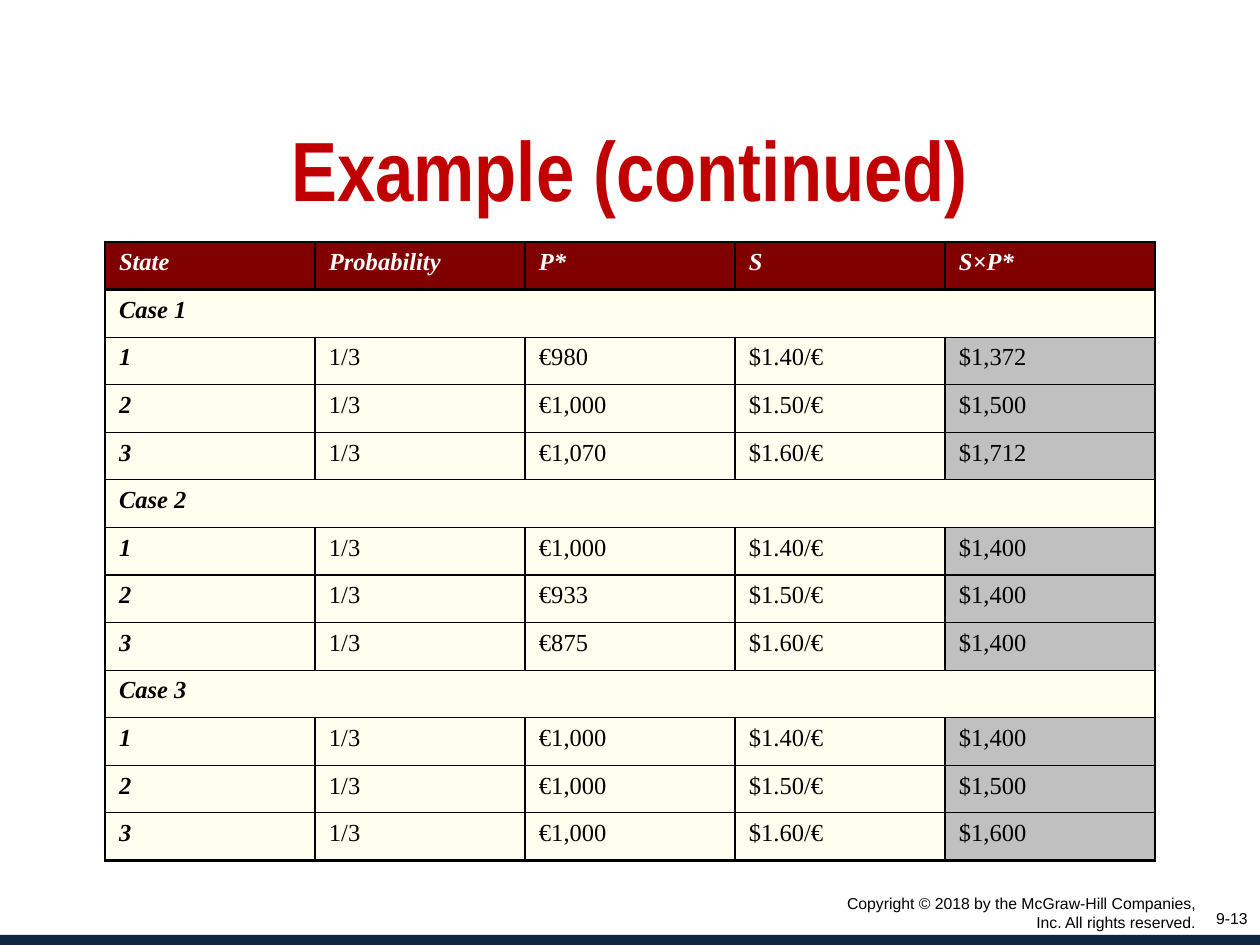
import pptx
import pptx.util
import pptx.dml.color
import pptx.enum.shapes
import pptx.enum.text
import pptx.oxml
from dataclasses import dataclass
from pptx.oxml.ns import nsdecls

SCALE = 914400 / 126
ALIGN = pptx.enum.text.PP_ALIGN
ANCHOR = pptx.enum.text.MSO_ANCHOR


def px(n):
    return pptx.util.Emu(round(n * SCALE))


def rgb(code):
    return pptx.dml.color.RGBColor.from_string(code)


@dataclass
class Theme:
    red: str = "C00000"
    head: str = "800000"
    cream: str = "FFFFEF"
    gray: str = "C0C0C0"
    navy: str = "0F243E"
    black: str = "000000"
    white: str = "FFFFFF"
    big: int = 48
    cell: int = 14
    small: int = 9
    thin: float = 0.75
    thick: float = 2
    title: str = "Arial Narrow"
    serif: str = "Times New Roman"
    sans: str = "Arial"


class Deck:
    def __init__(self, theme):
        self.theme = theme
        self.file = pptx.Presentation()
        self.file.slide_width = px(1260)
        self.file.slide_height = px(945)
        self.slide = self.file.slides.add_slide(self.file.slide_layouts[5])

    def style(self, para, name, size, color, bold=False, italic=False):
        for run in para.runs:
            font = run.font
            font.name, font.size = name, pptx.util.Pt(size)
            font.bold, font.italic = bold, italic
            font.color.rgb = rgb(color)

    def place(self, shape, x, y, w, h):
        shape.left, shape.top, shape.width, shape.height = map(px, (x, y, w, h))

    def bar(self, x, y, w, h, color):
        kind = pptx.enum.shapes.MSO_SHAPE.RECTANGLE
        shape = self.slide.shapes.add_shape(kind, *map(px, (x, y, w, h)))
        shape.shadow.inherit = False
        shape.fill.solid()
        shape.fill.fore_color.rgb = rgb(color)
        shape.line.fill.background()

    def title(self, text, x, y, w, h):
        shape = self.slide.shapes.title
        self.place(shape, x, y, w, h)
        frame = shape.text_frame
        frame.text = text
        frame.vertical_anchor = ANCHOR.TOP
        frame.margin_top = px(13)
        para = frame.paragraphs[0]
        para.alignment = ALIGN.CENTER
        self.style(para, self.theme.title, self.theme.big, self.theme.red, bold=True)

    def note(self, text, x, y, w, h, top):
        frame = self.slide.shapes.add_textbox(*map(px, (x, y, w, h))).text_frame
        frame.word_wrap = True
        frame.margin_top = px(top)
        frame.text = text
        para = frame.paragraphs[0]
        para.alignment = ALIGN.RIGHT
        self.style(para, self.theme.sans, self.theme.small, self.theme.black)

    def edge(self, cell, top, bottom):
        props = cell._tc.get_or_add_tcPr()
        thin = self.theme.thin
        for side, width in zip("LRTB", (thin, thin, top, bottom)):
            props.append(pptx.oxml.parse_xml(
                f'<a:ln{side} {nsdecls("a")} w="{pptx.util.Pt(width)}">'
                f'<a:solidFill><a:srgbClr val="{self.theme.black}"/></a:solidFill>'
                f'</a:ln{side}>'))

    def table(self, rows, x, y, w, h):
        theme = self.theme
        last, wide = len(rows) - 1, len(rows[0])
        grid = self.slide.shapes.add_table(
            len(rows), wide, *map(px, (x, y, w, h))).table
        for r, row in enumerate(rows):
            span = len(row) == 1
            top = theme.thick if r == 1 else theme.thin
            bottom = theme.thick if r in (0, last) else theme.thin
            for c in range(wide):
                cell = grid.cell(r, c)
                self.edge(cell, top, bottom)
                cell.fill.solid()
                fill = theme.gray if c == wide - 1 and not span else theme.cream
                cell.fill.fore_color.rgb = rgb(fill if r else theme.head)
                cell.margin_left = cell.margin_right = px(14)
                cell.margin_top = cell.margin_bottom = px(7)
                if c < len(row):
                    cell.text = row[c]
                    strong = r == 0 or c == 0
                    self.style(cell.text_frame.paragraphs[0], theme.serif, theme.cell,
                               theme.black if r else theme.white, strong, strong)
            if span:
                grid.cell(r, 0).merge(grid.cell(r, wide - 1))


def main():
    theme = Theme()
    deck = Deck(theme)

    # Bottom band and title
    deck.bar(0, 935, 1260, 13, theme.navy)
    deck.title("Example (continued)", 63, 105, 1134, 157)

    # Three cases, each with the same rates and odds
    rates = ("$1.40/€", "$1.50/€", "$1.60/€")
    cases = (
        (("€980", "$1,372"), ("€1,000", "$1,500"), ("€1,070", "$1,712")),
        (("€1,000", "$1,400"), ("€933", "$1,400"), ("€875", "$1,400")),
        (("€1,000", "$1,400"), ("€1,000", "$1,500"), ("€1,000", "$1,600")),
    )
    rows = [("State", "Probability", "P*", "S", "S×P*")]
    for n, case in enumerate(cases, 1):
        rows.append((f"Case {n}",))
        for state, (rate, (price, value)) in enumerate(zip(rates, case), 1):
            rows.append((str(state), "1/3", price, rate, value))
    deck.table(rows, 105, 242, 1050, 619)

    # Page number and copyright
    deck.note("9-13", 1197, 903, 63, 42, 6)
    deck.note("Copyright © 2018 by the McGraw-Hill Companies, Inc. All rights reserved.",
              809, 892, 399, 57, 2)

    deck.file.save("out.pptx")


if __name__ == "__main__":
    main()
